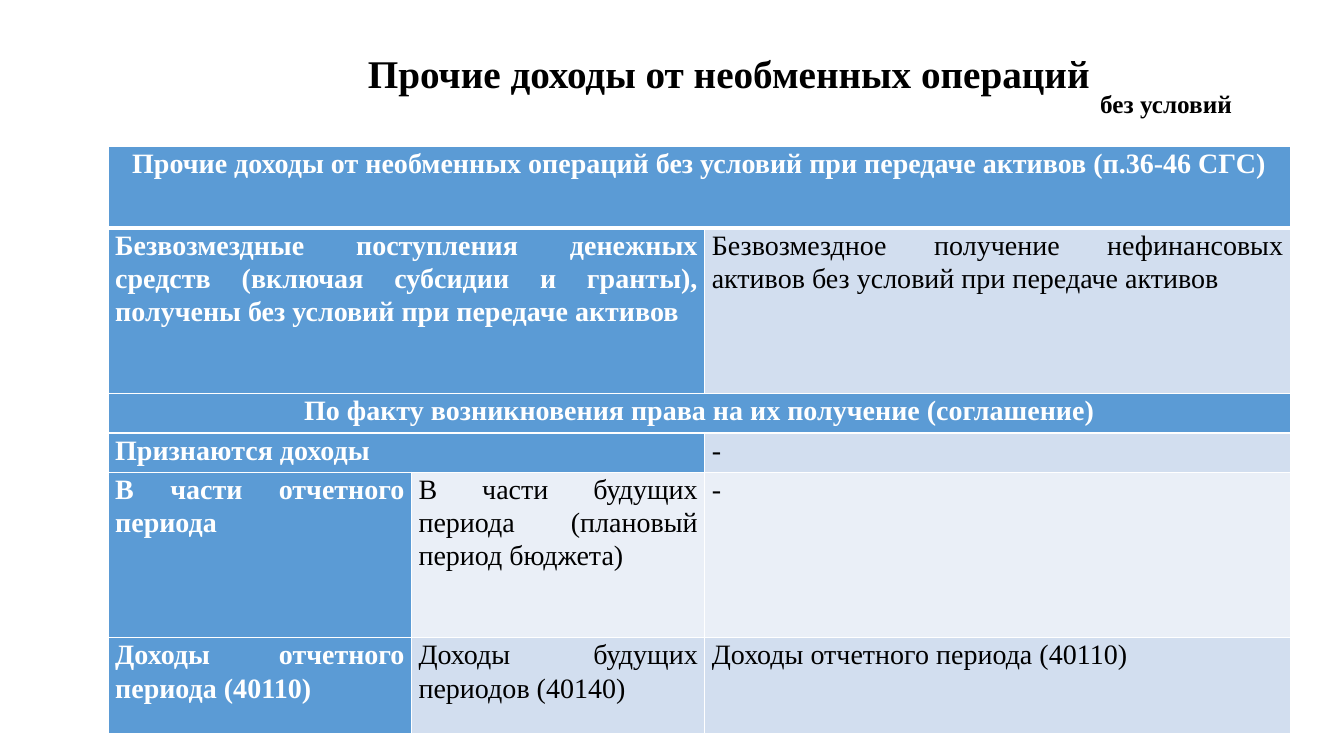
from lxml.etree import SubElement
from pptx import Presentation
from pptx.dml.color import RGBColor
from pptx.enum.text import MSO_AUTO_SIZE, PP_ALIGN
from pptx.oxml.ns import qn
from pptx.util import Pt

FONT = "Times New Roman"
BLACK = RGBColor(0x00, 0x00, 0x00)
WHITE = RGBColor(0xFF, 0xFF, 0xFF)
BLUE = RGBColor(0x5B, 0x9B, 0xD5)
LIGHT = RGBColor(0xD2, 0xDE, 0xEF)
PALE = RGBColor(0xEA, 0xEF, 0xF7)

COLUMN_WIDTHS = [216.7, 209.5, 418.3]
ROW_HEIGHTS = [58.3, 118.1, 28.1, 28.1, 118.1, 68.4]
BODY_FILLS = [BLUE, LIGHT, BLUE, LIGHT, PALE, LIGHT]
ROWS = [
    [("Прочие доходы от необменных операций без условий при передаче активов (п.36-46 СГС)", 3)],
    [("Безвозмездные поступления денежных средств (включая субсидии и гранты), "
      "получены без условий при передаче активов", 2),
     ("Безвозмездное получение нефинансовых активов без условий при передаче активов", 1)],
    [("По факту возникновения права на их получение (соглашение)", 3)],
    [("Признаются доходы", 2), ("-", 1)],
    [("В части отчетного периода", 1),
     ("В части будущих периода (плановый период бюджета)", 1), ("-", 1)],
    [("Доходы отчетного периода (40110)", 1),
     ("Доходы будущих периодов (40140)", 1),
     ("Доходы отчетного периода (40110)", 1)],
]


def write(frame, text, size, color, bold, align, spacing=1.0):
    """Put one formatted paragraph into a text frame."""
    frame.word_wrap = True
    para = frame.paragraphs[0]
    para.text = text
    para.alignment = align
    para.line_spacing = spacing
    font = para.runs[0].font
    font.name, font.size, font.bold = FONT, Pt(size), bold
    font.color.rgb = color


def add_text(page, left, top, width, height, text, size, align, spacing=1.0):
    """Add a bold black text box."""
    box = page.shapes.add_textbox(Pt(left), Pt(top), Pt(width), Pt(height))
    box.text_frame.auto_size = MSO_AUTO_SIZE.NONE
    write(box.text_frame, text, size, BLACK, True, align, spacing)


def set_borders(cell, top, bottom):
    """Draw white borders of the given top and bottom widths, 1 pt at the sides."""
    properties = cell._tc.get_or_add_tcPr()
    for side, width in (("L", 1), ("R", 1), ("T", top), ("B", bottom)):
        line = SubElement(properties, qn(f"a:ln{side}"), w=str(Pt(width)))
        fill = SubElement(line, qn("a:solidFill"))
        SubElement(fill, qn("a:srgbClr"), val=str(WHITE))


def fill_cell(cell, text, fill, color, bold, align):
    """Give a cell its fill, margins and text."""
    cell.fill.solid()
    cell.fill.fore_color.rgb = fill
    cell.margin_left = cell.margin_right = Pt(5)
    cell.margin_top = cell.margin_bottom = 0
    write(cell.text_frame, text, 20, color, bold, align, 1.07)


def add_income_table(page, left, top):
    """Add the income table with its merged cells."""
    frame = page.shapes.add_table(
        len(ROW_HEIGHTS), len(COLUMN_WIDTHS), Pt(left), Pt(top),
        Pt(sum(COLUMN_WIDTHS)), Pt(sum(ROW_HEIGHTS)))
    table = frame.table
    for column, width in zip(table.columns, COLUMN_WIDTHS):
        column.width = Pt(width)
    for index, entries in enumerate(ROWS):
        table.rows[index].height = Pt(ROW_HEIGHTS[index])
        for cell in table.rows[index].cells:
            set_borders(cell, 3 if index == 1 else 1, 3 if index == 0 else 1)
        start = 0
        for text, span in entries:
            cell = table.cell(index, start)
            if span > 1:
                cell.merge(table.cell(index, start + span - 1))
            leading = start == 0
            fill_cell(cell, text,
                      BLUE if leading else BODY_FILLS[index],
                      WHITE if leading else BLACK, leading,
                      PP_ALIGN.CENTER if span == 3 else PP_ALIGN.JUSTIFY)
            start += span


def main():
    """Build and save the slide."""
    deck = Presentation()
    deck.slide_width, deck.slide_height = Pt(960), Pt(540)
    page = deck.slides.add_slide(deck.slide_layouts[6])
    add_text(page, 202.3, 29.5, 636.5, 43.9,
             "Прочие доходы от необменных операций", 28, PP_ALIGN.CENTER, 1.07)
    add_income_table(page, 77.3, 104.8)
    add_text(page, 105.8, 59.8, 781.2, 51.1, "без условий", 18, PP_ALIGN.RIGHT)
    deck.save("out.pptx")


if __name__ == "__main__":
    main()
